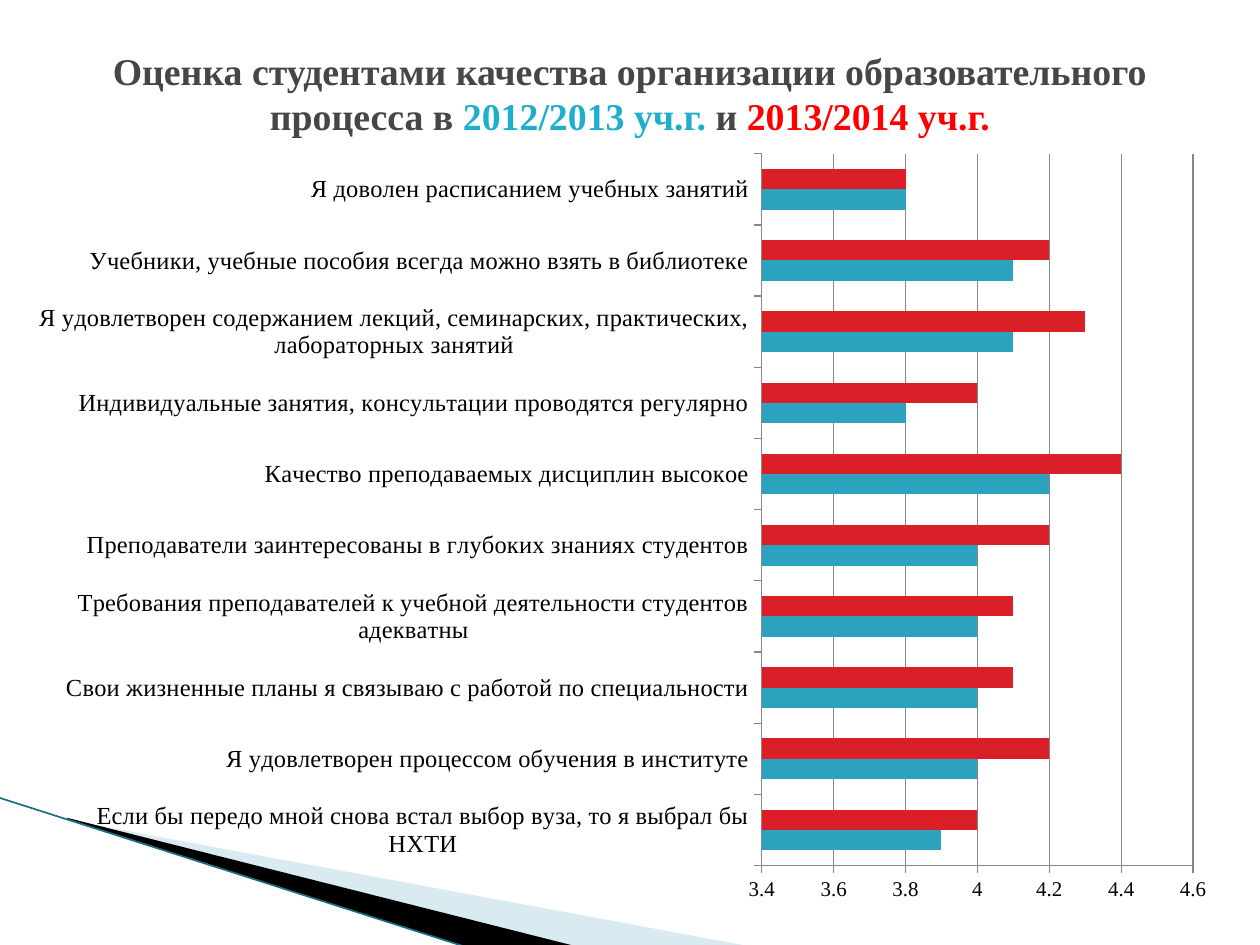
from dataclasses import dataclass

from lxml import etree
from pptx import Presentation
from pptx.chart.data import CategoryChartData
from pptx.dml.color import RGBColor
from pptx.enum.chart import XL_CHART_TYPE, XL_TICK_MARK
from pptx.enum.shapes import MSO_CONNECTOR
from pptx.enum.text import MSO_ANCHOR, MSO_AUTO_SIZE, PP_ALIGN
from pptx.oxml import parse_xml
from pptx.oxml.ns import nsdecls, qn
from pptx.util import Inches, Pt

BAR = XL_CHART_TYPE.BAR_CLUSTERED
TICK_OUT = XL_TICK_MARK.OUTSIDE
STRAIGHT = MSO_CONNECTOR.STRAIGHT
MIDDLE, CENTER = MSO_ANCHOR.MIDDLE, PP_ALIGN.CENTER
NO_FIT = MSO_AUTO_SIZE.NONE


@dataclass(frozen=True)
class Theme:
    font: str = "Times New Roman"
    title: str = "464646"
    year_1: str = "1FAECD"
    year_2: str = "FF0000"
    bar_1: str = "2DA2BF"
    bar_2: str = "DA1F28"
    text: str = "000000"
    grid: str = "878787"
    wedge_light: str = "A0CBDC"
    wedge_dark: str = "000000"
    wedge_line: str = "1A6E84"
    title_size: float = 21.6
    category_size: float = 14
    value_size: float = 12


T = Theme()

# Statement, score in 2012/2013, score in 2013/2014; bottom to top
SCORES = [
    ("Если бы передо мной снова встал выбор вуза, то я выбрал бы НХТИ", 3.9, 4),
    ("Я удовлетворен процессом обучения в институте", 4, 4.2),
    ("Свои жизненные планы я связываю с работой по специальности", 4, 4.1),
    ("Требования преподавателей к учебной деятельности студентов адекватны", 4, 4.1),
    ("Преподаватели заинтересованы в глубоких знаниях студентов", 4, 4.2),
    ("Качество преподаваемых дисциплин высокое", 4.2, 4.4),
    ("Индивидуальные занятия, консультации проводятся регулярно", 3.8, 4),
    ("Я удовлетворен содержанием лекций, семинарских, практических, "
     "лабораторных занятий", 4.1, 4.3),
    ("Учебники, учебные пособия всегда можно взять в библиотеке", 4.1, 4.2),
    ("Я доволен расписанием учебных занятий", 3.8, 3.8),
]

TITLE_RUNS = [
    ("Оценка студентами качества организации образовательного процесса в ", T.title),
    ("2012/2013 уч.г. ", T.year_1),
    ("и ", T.title),
    ("2013/2014 уч.г.", T.year_2),
]


def rgb(value):
    return RGBColor.from_string(value)


def add_wedge(s, points, color, alpha=None):
    start, *rest = [(Inches(px), Inches(py)) for px, py in points]
    fb = s.shapes.build_freeform(*start)
    fb.add_line_segments(rest, close=True)
    sp = fb.convert_to_shape()
    sp.shadow.inherit = False
    sp.fill.solid()
    sp.fill.fore_color.rgb = rgb(color)
    sp.line.fill.background()
    if alpha is not None:
        clr = sp.element.spPr.find(qn("a:solidFill"))[0]
        etree.SubElement(clr, qn("a:alpha"), val=str(alpha * 1000))


def add_corner(s, x, y):
    """Swoosh in the lower left corner, from its top left point."""
    add_wedge(s, [(x + 0.56, y + 0.18), (x + 5.96, y + 1.18), (x + 4.57, y + 1.18),
                  (x + 0.56, y + 0.17)], T.wedge_light, alpha=40)
    add_wedge(s, [(x + 0.54, y + 0.16), (x + 4.58, y + 1.18), (x + 3.73, y + 1.19),
                  (x + 0.55, y + 0.17)], T.wedge_dark)
    line = s.shapes.add_connector(STRAIGHT, Inches(x), Inches(y),
                                  Inches(x + 3.72), Inches(y + 1.19))
    line.line.color.rgb = rgb(T.wedge_line)
    line.line.width = Pt(0.95)
    etree.SubElement(line.element.spPr, qn("a:effectLst"))


def style_axis(axis, size):
    axis.major_tick_mark = TICK_OUT
    axis.format.line.color.rgb = rgb(T.grid)
    axis.tick_labels.font.size = Pt(size)


def add_scores(s, x, y, w, h):
    data = CategoryChartData()
    names, *years = zip(*SCORES)
    data.categories = names
    for i, values in enumerate(years, 1):
        data.add_series(f"Series {i}", values)
    chart = s.shapes.add_chart(BAR, Inches(x), Inches(y), Inches(w), Inches(h), data).chart
    chart.has_legend = False
    chart.has_title = False
    chart.font.name = T.font
    chart.font.size = Pt(T.value_size)
    chart.font.color.rgb = rgb(T.text)

    plot = chart.plots[0]
    plot.gap_width, plot.overlap = 150, 0
    plot.vary_by_categories = False
    for series, color in zip(plot.series, (T.bar_1, T.bar_2)):
        series.format.fill.solid()
        series.format.fill.fore_color.rgb = rgb(color)

    style_axis(chart.category_axis, T.category_size)
    va = chart.value_axis
    style_axis(va, T.value_size)
    va.minimum_scale, va.maximum_scale, va.major_unit = 3.4, 4.6, 0.2
    va.has_major_gridlines = True
    va.major_gridlines.format.line.color.rgb = rgb(T.grid)
    va.tick_labels.number_format = "General"
    va.tick_labels.number_format_is_linked = False

    # Fixed plot area, leaving room for the long statements
    area = chart.element.chart.plotArea
    for old in area.findall(qn("c:layout")):
        area.remove(old)
    box = {"x": 5.73, "y": 0.13, "w": 3.43, "h": 5.65}
    parts = "".join(f'<c:{k} val="{v / (w if k in "xw" else h):.4f}"/>'
                    for k, v in box.items())
    area.insert(0, parse_xml(
        f'<c:layout {nsdecls("c")}><c:manualLayout><c:layoutTarget val="inner"/>'
        f'<c:xMode val="edge"/><c:yMode val="edge"/>{parts}'
        '</c:manualLayout></c:layout>'))


def add_title(s, x, y, w, h):
    sp = s.shapes.title
    sp.left, sp.top, sp.width, sp.height = map(Inches, (x, y, w, h))
    tf = sp.text_frame
    tf.word_wrap = True
    tf.auto_size = NO_FIT
    tf.vertical_anchor = MIDDLE
    p = tf.paragraphs[0]
    p.alignment = CENTER
    for text, color in TITLE_RUNS:
        r = p.add_run()
        r.text = text
        r.font.name, r.font.size, r.font.bold = T.font, Pt(T.title_size), True
        r.font.color.rgb = rgb(color)
    sp.element.getparent().append(sp.element)  # title in front


def main():
    prs = Presentation()
    prs.slide_width, prs.slide_height = Inches(10), Inches(7.5)
    s = prs.slides.add_slide(prs.slide_layouts[5])
    add_corner(s, -0.01, 6.33)
    add_scores(s, 0.31, 1.09, 9.45, 6.17)
    add_title(s, 0.5, 0.3, 9, 0.87)
    prs.save("out.pptx")


if __name__ == "__main__":
    main()
